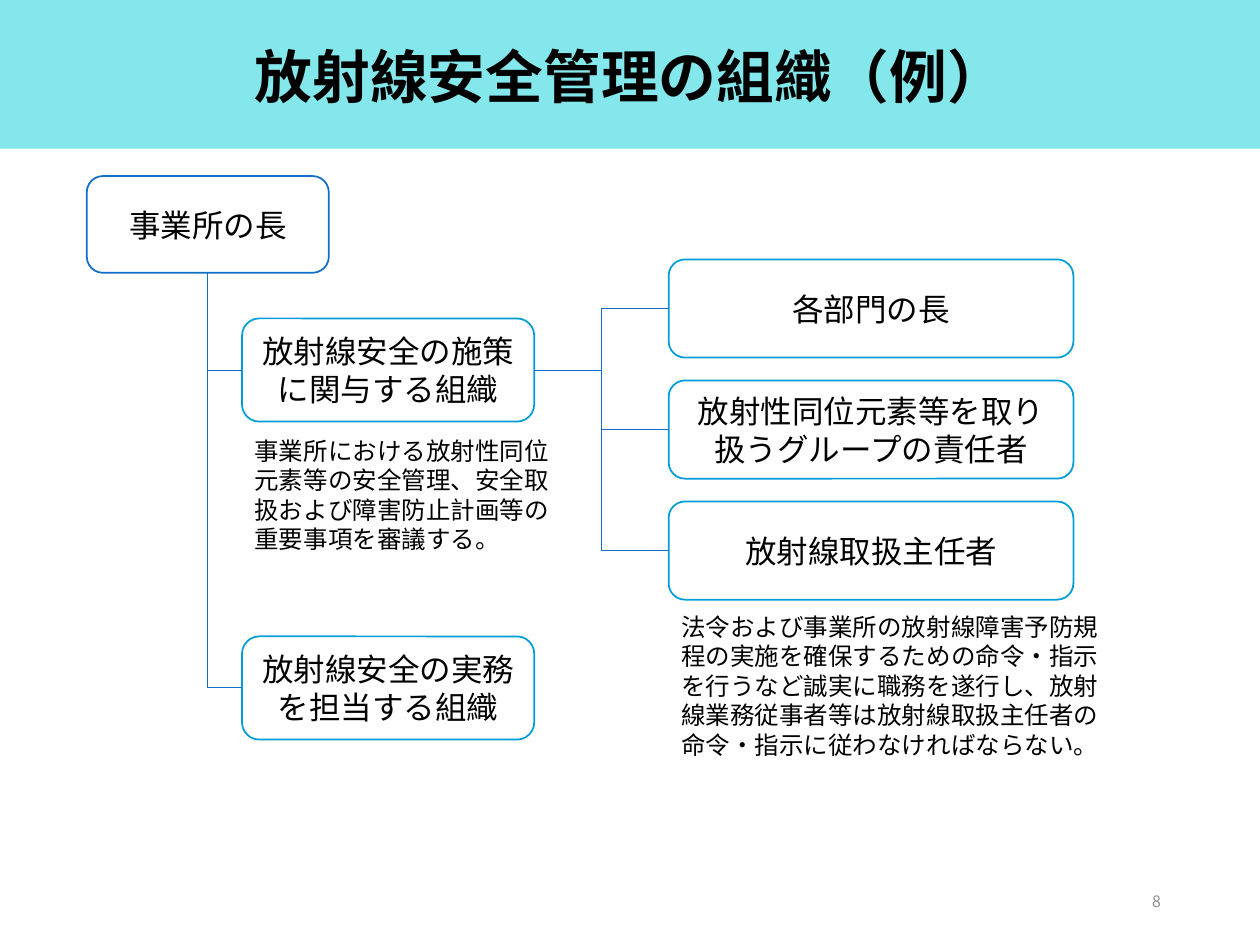
from lxml.etree import SubElement as Sub
from pptx import Presentation
from pptx.dml.color import RGBColor as Rgb
from pptx.enum.shapes import MSO_CONNECTOR as Conn, MSO_SHAPE as Kind
from pptx.enum.text import MSO_ANCHOR as Anchor, PP_ALIGN as Align
from pptx.oxml.ns import qn
from pptx.util import Cm, Pt

FONT = "Noto Sans CJK JP"
COLORS = {"band": "0BD0D9", "head": "0F6FC6", "unit": "009DD9",
          "white": "FFFFFF", "text": "000000", "page": "8C8C8C"}
TOP, LEFT, BOTTOM, RIGHT = range(4)  # connection sites of a box


def color(name):
    return Rgb.from_string(COLORS[name])


def place(box):
    return [Cm(v) for v in box]


def write(shape, text, size, hue="text", align=Align.LEFT,
          anchor=Anchor.TOP, bold=False, space=1.0):
    frame = shape.text_frame
    for key, val in {"word_wrap": True, "vertical_anchor": anchor}.items():
        setattr(frame, key, val)
    para = frame.paragraphs[0]
    para.alignment, para.line_spacing = align, space
    run = para.add_run()
    run.text = text
    for key, val in {"name": FONT, "size": Pt(size), "bold": bold}.items():
        setattr(run.font, key, val)
    run.font.color.rgb = color(hue)
    # East Asian typeface
    Sub(run._r.get_or_add_rPr(), qn("a:ea"), typeface=FONT)


def label(slide, box, text, size, **style):
    write(slide.shapes.add_textbox(*place(box)), text, size, **style)


def node(slide, box, text, hue="unit"):
    shape = slide.shapes.add_shape(Kind.ROUNDED_RECTANGLE, *place(box))
    shape.shadow.inherit = False
    shape.fill.solid()
    shape.fill.fore_color.rgb = color("white")
    shape.line.color.rgb = color(hue)
    shape.line.width = Pt(1)
    write(shape, text, 18, align=Align.CENTER, anchor=Anchor.MIDDLE)
    return shape


def link(slide, start, out, end, into, bend="bentConnector3"):
    line = slide.shapes.add_connector(Conn.ELBOW, 0, 0, 0, 0)
    line.begin_connect(start, out)
    line.end_connect(end, into)
    line.line.color.rgb = color("head")
    line.line.width = Pt(0.5)
    props = line._element.spPr
    props.find(qn("a:prstGeom")).set("prst", bend)
    Sub(props, qn("a:effectLst"))


def header(slide, box, text):
    x, y, w, h = box
    band = slide.shapes.add_shape(Kind.RECTANGLE, *place(box))
    band.shadow.inherit = False
    band.fill.solid()
    band.fill.fore_color.rgb = color("band")
    band.line.fill.background()
    # Half transparent fill
    tint = band._element.spPr.find(qn("a:solidFill"))[0]
    Sub(tint, qn("a:alpha"), val="50000")
    label(slide, (x + 1.75, y + 0.53, w - 3.5, 2.16), text, 33, bold=True,
          align=Align.CENTER, anchor=Anchor.MIDDLE, space=0.9)


def chart(slide, box):
    x, y, w, h = box
    # Head of the site
    head = node(slide, (x, y, 4.88, 1.95), "事業所の長", "head")

    # Organisations under the head
    mid = x + 3.13
    names = ["放射線安全の施策に関与する組織", "放射線安全の実務を担当する組織"]
    units = [node(slide, (mid, y + 2.87 + i * 6.41, 5.89, 2.08), name)
             for i, name in enumerate(names)]
    for unit in units:
        link(slide, unit, LEFT, head, BOTTOM, "bentConnector2")
    label(slide, (mid, y + 5.11, 6.5, 2.64),
          "事業所における放射性同位元素等の安全管理、安全取扱および"
          "障害防止計画等の重要事項を審議する。", 14)

    # Members of the policy organisation
    far = x + w - 8.96
    names = ["各部門の長", "放射性同位元素等を取り扱うグループの責任者",
             "放射線取扱主任者"]
    for i, name in enumerate(names):
        member = node(slide, (far, y + 1.68 + i * 2.44, 8.16, 1.98), name)
        link(slide, units[0], RIGHT, member, LEFT)
    label(slide, (far, y + h - 3.25, 8.96, 3.25),
          "法令および事業所の放射線障害予防規程の実施を確保するための"
          "命令・指示を行うなど誠実に職務を遂行し、放射線業務従事者等は"
          "放射線取扱主任者の命令・指示に従わなければならない。", 14)


def main():
    deck = Presentation()
    deck.slide_width, deck.slide_height = Cm(25.4), Cm(19.05)
    slide = deck.slides.add_slide(deck.slide_layouts[6])
    header(slide, (0, 0, 25.4, 3), "放射線安全管理の組織（例）")
    chart(slide, (1.75, 3.55, 20.69, 11.91))
    # Page number
    label(slide, (17.93, 17.65, 5.72, 1.02), "8", 9, hue="page",
          align=Align.RIGHT, anchor=Anchor.MIDDLE)
    deck.save("out.pptx")


if __name__ == "__main__":
    main()
